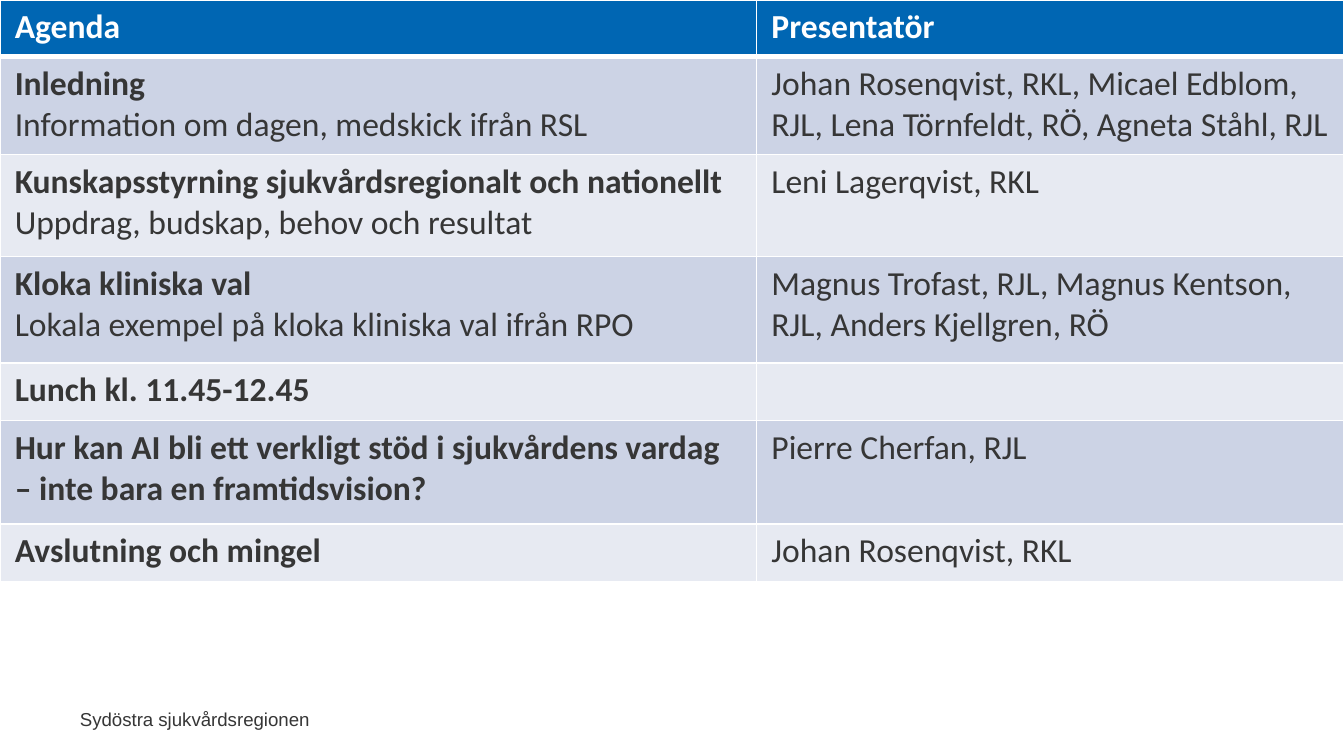
import pptx
import pptx.dml.color
import pptx.enum.text
import pptx.oxml
import pptx.oxml.ns
import pptx.util

Inches = pptx.util.Inches
Pt = pptx.util.Pt

COLUMN_WIDTHS = [5.63, 4.37]
ROW_HEIGHTS = [0.42, 0.73, 0.76, 0.79, 0.43, 0.77, 0.43]
TABLE_HEIGHT = 4.6

# Each row: bold heading, plain subtitle, presenter
AGENDA = [
    ("Inledning", "Information om dagen, medskick ifrån RSL",
     "Johan Rosenqvist, RKL, Micael Edblom, RJL, Lena Törnfeldt, RÖ, Agneta Ståhl, RJL"),
    ("Kunskapsstyrning sjukvårdsregionalt och nationellt",
     "Uppdrag, budskap, behov och resultat", "Leni Lagerqvist, RKL"),
    ("Kloka kliniska val", "Lokala exempel på kloka kliniska val ifrån RPO",
     "Magnus Trofast, RJL, Magnus Kentson, RJL, Anders Kjellgren, RÖ"),
    ("Lunch kl. 11.45-12.45", "", ""),
    ("Hur kan AI bli ett verkligt stöd i sjukvårdens vardag – inte bara en framtidsvision?",
     "", "Pierre Cherfan, RJL"),
    ("Avslutning och mingel", "", "Johan Rosenqvist, RKL"),
]


def color(hex_string):
    return pptx.dml.color.RGBColor.from_string(hex_string)


class SlideBuilder:
    text_color = "363636"
    header_text = "FFFFFF"
    header_fill = "0066B3"
    band_fills = ["CCD3E5", "E7EAF2"]
    border_color = "FFFFFF"

    def __init__(self, slide):
        self.slide = slide

    def format_font(self, font, hex_string, **values):
        for name, value in values.items():
            setattr(font, name, value)
        font.color.rgb = color(hex_string)

    def footer(self, text, left, top, width, height):
        box = self.slide.shapes.add_textbox(*map(Inches, (left, top, width, height)))
        box.text_frame.word_wrap = False
        paragraph = box.text_frame.paragraphs[0]
        paragraph.text = text
        paragraph.alignment = pptx.enum.text.PP_ALIGN.RIGHT
        self.format_font(paragraph.runs[0].font, self.text_color, name="Arial", size=Pt(10))

    def borders(self, cell, top, bottom):
        """Draw all four cell borders; top and bottom are widths in points."""
        properties = cell._tc.get_or_add_tcPr()
        widths = {"lnL": 1, "lnR": 1, "lnT": top, "lnB": bottom}
        for position, (tag, width) in enumerate(widths.items()):
            properties.insert(position, pptx.oxml.parse_xml(
                f'<a:{tag} {pptx.oxml.ns.nsdecls("a")} w="{Pt(width)}"><a:solidFill>'
                f'<a:srgbClr val="{self.border_color}"/></a:solidFill></a:{tag}>'))

    def cell(self, cell, lines, fill, text_color):
        """Fill a cell with (text, bold) lines."""
        margins = {"margin_left": 0.11, "margin_right": 0.11,
                   "margin_top": 0.05, "margin_bottom": 0.05}
        for name, value in margins.items():
            setattr(cell, name, Inches(value))
        cell.fill.solid()
        cell.fill.fore_color.rgb = color(fill)
        cell.text = "\n".join(text for text, bold in lines)
        for paragraph, (text, bold) in zip(cell.text_frame.paragraphs, lines):
            for font in [paragraph.font] + [run.font for run in paragraph.runs]:
                self.format_font(font, text_color, name="Calibri", size=Pt(18), bold=bold)

    def agenda_table(self, headings, agenda):
        frame = self.slide.shapes.add_table(
            len(agenda) + 1, len(headings), 0, 0,
            Inches(sum(COLUMN_WIDTHS)), Inches(TABLE_HEIGHT))
        table = frame.table
        for column, width in zip(table.columns, COLUMN_WIDTHS):
            column.width = Inches(width)
        for row, height in zip(table.rows, ROW_HEIGHTS):
            row.height = Inches(height)
        frame.height = Inches(TABLE_HEIGHT)

        for index, heading in enumerate(headings):
            self.cell(table.cell(0, index), [(heading, True)],
                      self.header_fill, self.header_text)
        for index, (heading, subtitle, presenter) in enumerate(agenda):
            topic = [(heading, True)] + ([(subtitle, False)] if subtitle else [])
            for column, lines in enumerate([topic, [(presenter, False)]]):
                self.cell(table.cell(index + 1, column), lines,
                          self.band_fills[index % 2], self.text_color)
        for index, row in enumerate(table.rows):
            for cell in row.cells:
                self.borders(cell, top=3 if index == 1 else 1, bottom=3 if index == 0 else 1)


def main():
    presentation = pptx.Presentation()
    presentation.slide_width = Inches(10)
    presentation.slide_height = presentation.slide_width * 9 // 16
    blank_layout = presentation.slide_layouts[6]
    builder = SlideBuilder(presentation.slides.add_slide(blank_layout))
    builder.footer("Sydöstra sjukvårdsregionen", 0.48, 5.22, 1.92, 0.27)
    builder.agenda_table(["Agenda", "Presentatör"], AGENDA)
    presentation.save("out.pptx")


if __name__ == "__main__":
    main()
